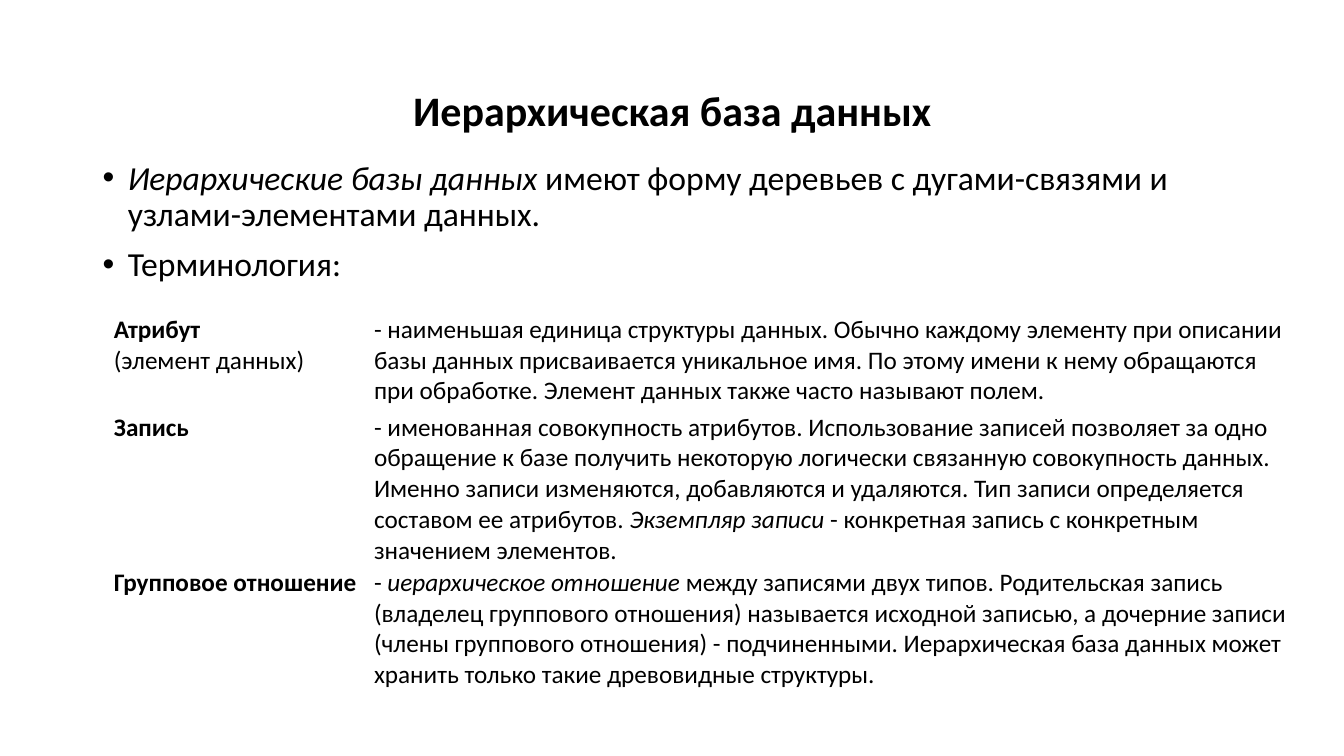
from pptx import Presentation
from pptx.dml.color import RGBColor as Rgb
from pptx.enum.text import MSO_ANCHOR as Anchor, PP_ALIGN as Align
from pptx.oxml.ns import qn
from pptx.util import Inches, Pt
from lxml.etree import SubElement as Sub

TITLE = [[("Иерархическая база данных", "b")]]
BODY = [
    [("Иерархические базы данных", "i"),
     (" имеют форму деревьев с дугами-связями и узлами-элементами данных.", "")],
    [("Терминология:", "")],
]
TERMS = [
    ([[("Атрибут", "b")], [("(элемент данных)", "")]],
     [[("- наименьшая единица структуры данных. Обычно каждому элементу при "
        "описании базы данных присваивается уникальное имя. По этому имени к "
        "нему обращаются при обработке. Элемент данных также часто называют "
        "полем.", "")]]),
    ([[("Запись", "b")]],
     [[("- именованная совокупность атрибутов. Использование записей позволяет "
        "за одно обращение к базе получить некоторую логически связанную "
        "совокупность данных. Именно записи изменяются, добавляются и "
        "удаляются. Тип записи определяется составом ее атрибутов. ", ""),
       ("Экземпляр записи", "i"),
       (" - конкретная запись с конкретным значением элементов.", "")]]),
    ([[("Групповое отношение", "b")]],
     [[("- ", ""),
       ("иерархическое отношение", "i"),
       (" между записями двух типов. Родительская запись (владелец группового "
        "отношения) называется исходной записью, а дочерние записи (члены "
        "группового отношения) - подчиненными. Иерархическая база данных может "
        "хранить только такие древовидные структуры.", "")]]),
]


class Deck:
    """Holds the style and the current slide."""

    font = "Calibri"
    hues = {"ink": "000000", "paper": "FFFFFF"}

    def __init__(self, slide):
        self.slide = slide
        self.paint(slide.background.fill)

    def paint(self, fill):
        fill.solid()
        fill.fore_color.rgb = Rgb.from_string(self.hues["paper"])

    def put(self, frame, paras, size):
        for n, runs in enumerate(paras):
            para = frame.add_paragraph() if n else frame.paragraphs[0]
            for text, mark in runs:
                run = para.add_run()
                run.text = text
                font = run.font
                font.name, font.size = self.font, Pt(size)
                font.bold, font.italic = mark == "b", mark == "i"
                font.color.rgb = Rgb.from_string(self.hues["ink"])

    def text(self, at, paras, size, anchor=Anchor.TOP):
        box = self.slide.shapes.add_textbox(*map(Inches, at))
        frame = box.text_frame
        frame.word_wrap = True
        frame.vertical_anchor = anchor
        self.put(frame, paras, size)
        for para in frame.paragraphs:
            para.line_spacing = 0.9
        return frame

    def title(self, at, paras):
        frame = self.text(at, paras, 30, Anchor.MIDDLE)
        frame.paragraphs[0].alignment = Align.CENTER

    def bullets(self, at, paras):
        for para in self.text(at, paras, 24).paragraphs:
            para.space_before = Pt(10)
            props = para._p.get_or_add_pPr()
            props.set("marL", str(Inches(0.25)))
            props.set("indent", str(Inches(-0.25)))
            Sub(props, qn("a:buFont")).set("typeface", "Arial")
            Sub(props, qn("a:buChar")).set("char", "•")

    def table(self, at, rows, wide, high):
        size = len(rows), len(wide)
        grid = self.slide.shapes.add_table(*size, *map(Inches, at)).table
        grid.first_row = grid.horz_banding = False
        for col, width in zip(grid.columns, wide):
            col.width = Inches(width)
        for row, height, cells in zip(grid.rows, high, rows):
            row.height = Inches(height)
            for cell, paras in zip(row.cells, cells):
                cell.margin_left = cell.margin_right = Inches(0.02)
                cell.margin_top = cell.margin_bottom = Inches(0.02)
                self.paint(cell.fill)
                self.put(cell.text_frame, paras, 18)


def main():
    show = Presentation()
    show.slide_width, show.slide_height = Inches(13.33), Inches(7.5)
    deck = Deck(show.slides.add_slide(show.slide_layouts[6]))
    deck.title((0.92, 0.4, 11.5, 1.45), TITLE)
    deck.bullets((0.92, 1.55, 11.5, 1.55), BODY)
    deck.table((1.11, 3.1, 11.68, 3.67), TERMS, (2.58, 9.1), (0.97, 1.54, 1.16))
    show.save("out.pptx")


if __name__ == "__main__":
    main()
